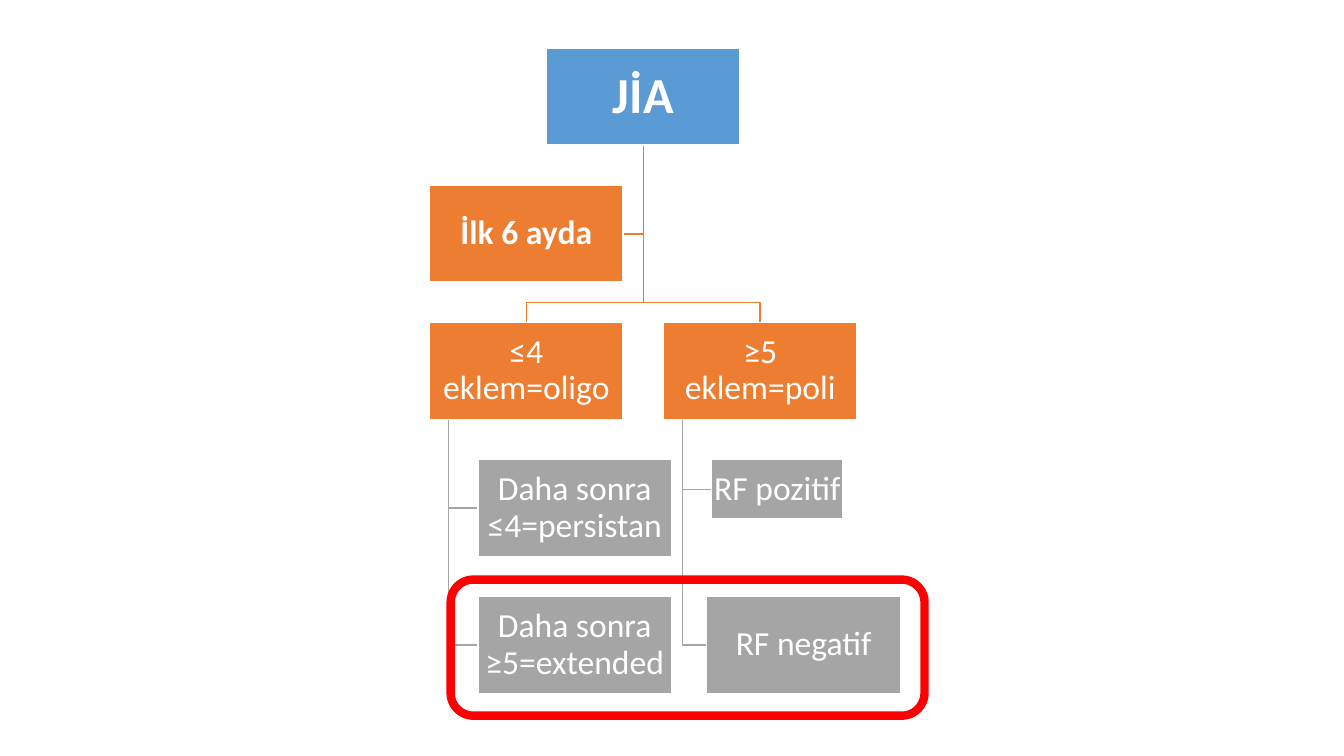
from dataclasses import dataclass

from pptx import Presentation
from pptx import util as u
from pptx.dml import color
from pptx.enum import shapes, text

BLUE, ORANGE, GRAY = "5B9BD5", "ED7D31", "A5A5A5"
WHITE, RED = "FFFFFF", "FF0000"
WIDE, HIGH = 1.92, 0.96
TOP, STEP = 0.48, 1.36
INDENT = 0.19
BEND = 0.2


@dataclass
class Node:
    label: str
    left: float
    row: int
    fill: str
    wide: float = WIDE
    high: float = HIGH
    size: int = 24
    bold: bool = False

    @property
    def top(self) -> float:
        return TOP + STEP * self.row

    @property
    def base(self) -> float:
        return self.top + self.high

    @property
    def center(self) -> float:
        return self.left + self.wide / 2

    @property
    def middle(self) -> float:
        return self.top + self.high / 2


def paint(hue: str) -> color.RGBColor:
    return color.RGBColor.from_string(hue)


def outline(shape, hue: str, weight: float) -> None:
    shape.line.color.rgb = paint(hue)
    shape.line.width = u.Pt(weight)
    shape.shadow.inherit = False


def write(shape, label: str, *, size: int, bold: bool, hue: str = WHITE,
          font: str = "Calibri", inset: float = 0.02) -> None:
    frame = shape.text_frame
    frame.word_wrap = True
    frame.vertical_anchor = text.MSO_ANCHOR.MIDDLE
    frame.margin_left = frame.margin_right = u.Inches(inset)
    frame.margin_top = frame.margin_bottom = u.Inches(inset)
    para = frame.paragraphs[0]
    para.alignment = text.PP_ALIGN.CENTER
    para.line_spacing = 0.9
    run = para.add_run()
    run.text = label
    run.font.name = font
    run.font.size = u.Pt(size)
    run.font.bold = bold
    run.font.color.rgb = paint(hue)


def draw_node(slide, node: Node) -> None:
    box = slide.shapes.add_shape(
        shapes.MSO_SHAPE.RECTANGLE, u.Inches(node.left), u.Inches(node.top),
        u.Inches(node.wide), u.Inches(node.high))
    box.fill.solid()
    box.fill.fore_color.rgb = paint(node.fill)
    outline(box, WHITE, 1)
    write(box, node.label, size=node.size, bold=node.bold)


def draw_path(slide, points: list[tuple[float, float]], hue: str) -> None:
    first, *rest = [(u.Inches(x), u.Inches(y)) for x, y in points]
    pen = slide.shapes.build_freeform(*first)
    pen.add_line_segments(rest, close=False)
    link = pen.convert_to_shape()
    link.fill.background()
    outline(link, hue, 1)


def draw_frame(slide, left: float, top: float, wide: float, high: float) -> None:
    frame = slide.shapes.add_shape(
        shapes.MSO_SHAPE.ROUNDED_RECTANGLE, u.Inches(left), u.Inches(top),
        u.Inches(wide), u.Inches(high))
    frame.fill.background()
    outline(frame, RED, 6)


def main() -> None:
    deck = Presentation()
    deck.slide_width, deck.slide_height = u.Inches(13.33), u.Inches(7.5)
    slide = deck.slides.add_slide(deck.slide_layouts[6])

    root = Node("JİA", 5.42, 0, BLUE, size=36, bold=True)
    aside = Node("İlk 6 ayda", 4.26, 1, ORANGE, bold=True)
    oligo = Node("≤4 eklem=oligo", 4.26, 2, ORANGE)
    poly = Node("≥5 eklem=poli", 6.58, 2, ORANGE)
    tree = [
        (oligo, [Node("Daha sonra ≤4=persistan", 4.74, 3, GRAY),
                 Node("Daha sonra ≥5=extended", 4.74, 4, GRAY)]),
        (poly, [Node("RF pozitif", 7.06, 3, GRAY, wide=1.3, high=0.59),
                Node("RF negatif", 7.01, 4, GRAY)]),
    ]

    stem = root.center
    draw_path(slide, [(stem, root.base), (stem, aside.middle),
                      (aside.left + aside.wide, aside.middle)], ORANGE)
    for branch, leaves in tree:
        turn = branch.top - BEND
        draw_path(slide, [(stem, root.base), (stem, turn), (branch.center, turn),
                          (branch.center, branch.top)], ORANGE)
        side = branch.left + INDENT
        for leaf in leaves:
            draw_path(slide, [(side, branch.base), (side, leaf.middle),
                              (leaf.left, leaf.middle)], GRAY)

    for node in [root, aside]:
        draw_node(slide, node)
    for branch, leaves in tree:
        for node in [branch, *leaves]:
            draw_node(slide, node)
    draw_frame(slide, 4.47, 5.75, 4.7, 1.35)
    deck.save("out.pptx")


if __name__ == "__main__":
    main()
